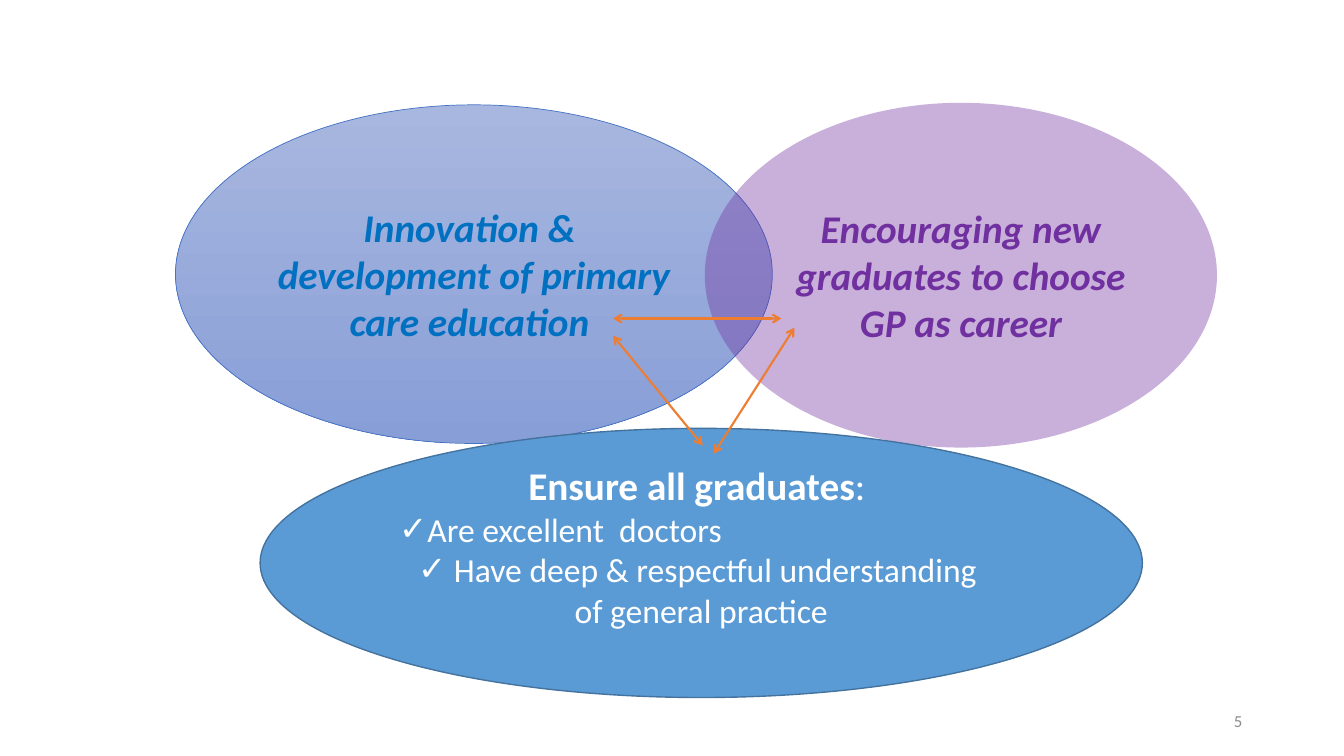
from lxml.etree import SubElement
from pptx import Presentation
from pptx.dml.color import RGBColor
from pptx.enum.shapes import MSO_CONNECTOR, MSO_SHAPE
from pptx.enum.text import MSO_ANCHOR, PP_ALIGN
from pptx.oxml.ns import qn
from pptx.util import Inches, Pt

WIDE, HIGH = 13.33, 7.5
HEAD = {"size": 28, "bold": True}
ITEM = {"size": 24, "bullet": "✓"}

# Each oval: place, fill, (line colour, width), bottom inset, paragraphs
OVALS = [
    {"at": (1.74, 1.04, 5.92, 3.36), "fill": ("A8B7DF", "889ED7"),
     "line": ("4472C4", 0.5),
     "paras": [([("Innovation &  development of primary care education ", {})],
                {**HEAD, "italic": True, "color": "0070C0"})]},
    {"at": (6.99, 1.02, 5.08, 3.42), "fill": "7030A0", "alpha": 38,
     "paras": [([("Encouraging new graduates to choose GP as career", {})],
                {**HEAD, "italic": True, "color": "7030A0"})]},
    {"at": (2.58, 4.25, 8.75, 2.67), "fill": "5B9BD5",
     "line": ("43739E", 1), "foot": 0.39,
     "paras": [([("Ensure all graduates", {}), (": ", {"bold": False})], HEAD),
               ([("Are excellent  doctors", {})],
                {**ITEM, "align": PP_ALIGN.LEFT}),
               ([(" Have deep & respectful understanding \nof general practice",
                  {})], ITEM)]},
]
ARROWS = [
    ((7.75, 3.16), (6.08, 3.16)),
    ((6.08, 3.33), (6.97, 4.42)),
    ((7.88, 3.25), (7.08, 4.5)),
]
PAGE = "5"


def rgb(code):
    return RGBColor.from_string(code)


def write(para, runs, size=24, color="FFFFFF", bold=False, italic=False,
          align=PP_ALIGN.CENTER, bullet=None):
    """Fill a paragraph with (text, overrides) runs; a newline breaks the line."""
    para.alignment = align
    for text, extra in runs:
        for row, part in enumerate(text.split("\n")):
            if row:
                para.add_line_break()
            run = para.add_run()
            run.text = part
            font = run.font
            font.name, font.size = "Calibri", Pt(size)
            font.bold, font.italic = extra.get("bold", bold), italic
            font.color.rgb = rgb(color)
    if bullet:
        props = para._p.get_or_add_pPr()
        SubElement(props, qn("a:buFont"), typeface="Calibri")
        SubElement(props, qn("a:buChar"), char=bullet)


def paint(shape, fill, alpha=None):
    """Fill with one colour, or from top to bottom with a pair."""
    if isinstance(fill, tuple):
        shape.fill.gradient()
        shape.fill.gradient_angle = 270
        for stop, code in zip(shape.fill.gradient_stops, fill):
            stop.color.rgb = rgb(code)
        return
    shape.fill.solid()
    shape.fill.fore_color.rgb = rgb(fill)
    if alpha:
        tint = shape._element.spPr.find(qn("a:solidFill"))[0]
        SubElement(tint, qn("a:alpha"), val=str(alpha * 1000))


def oval(slide, at, fill, paras, line=None, alpha=None, foot=0.05):
    shape = slide.shapes.add_shape(MSO_SHAPE.OVAL, *map(Inches, at))
    shape.shadow.inherit = False
    paint(shape, fill, alpha)
    if line:
        shape.line.color.rgb = rgb(line[0])
        shape.line.width = Pt(line[1])
    else:
        shape.line.fill.background()
    frame = shape.text_frame
    frame.word_wrap = True
    frame.vertical_anchor = MSO_ANCHOR.MIDDLE
    frame.margin_bottom = Inches(foot)
    for num, (runs, style) in enumerate(paras):
        para = frame.add_paragraph() if num else frame.paragraphs[0]
        write(para, runs, **style)


def arrow(slide, start, end):
    link = slide.shapes.add_connector(
        MSO_CONNECTOR.STRAIGHT, *map(Inches, start + end))
    link.line.color.rgb = rgb("ED7D31")
    link.line.width = Pt(1.5)
    props = link._element.spPr
    for tag in ("a:headEnd", "a:tailEnd"):
        SubElement(props.find(qn("a:ln")), qn(tag), type="arrow")
    SubElement(props, qn("a:effectLst"))


def main():
    deck = Presentation()
    deck.slide_width, deck.slide_height = Inches(WIDE), Inches(HIGH)
    slide = deck.slides.add_slide(deck.slide_layouts[6])
    left, right, base = OVALS
    oval(slide, **left)
    oval(slide, **right)
    arrow(slide, *ARROWS[0])
    oval(slide, **base)
    for ends in ARROWS[1:]:
        arrow(slide, *ends)
    box = slide.shapes.add_textbox(*map(Inches, (9.42, 6.95, 3, 0.4)))
    box.text_frame.word_wrap = True
    box.text_frame.vertical_anchor = MSO_ANCHOR.MIDDLE
    write(box.text_frame.paragraphs[0], [(PAGE, {})], size=12,
          color="8C8C8C", align=PP_ALIGN.RIGHT)
    deck.save("out.pptx")


if __name__ == "__main__":
    main()
